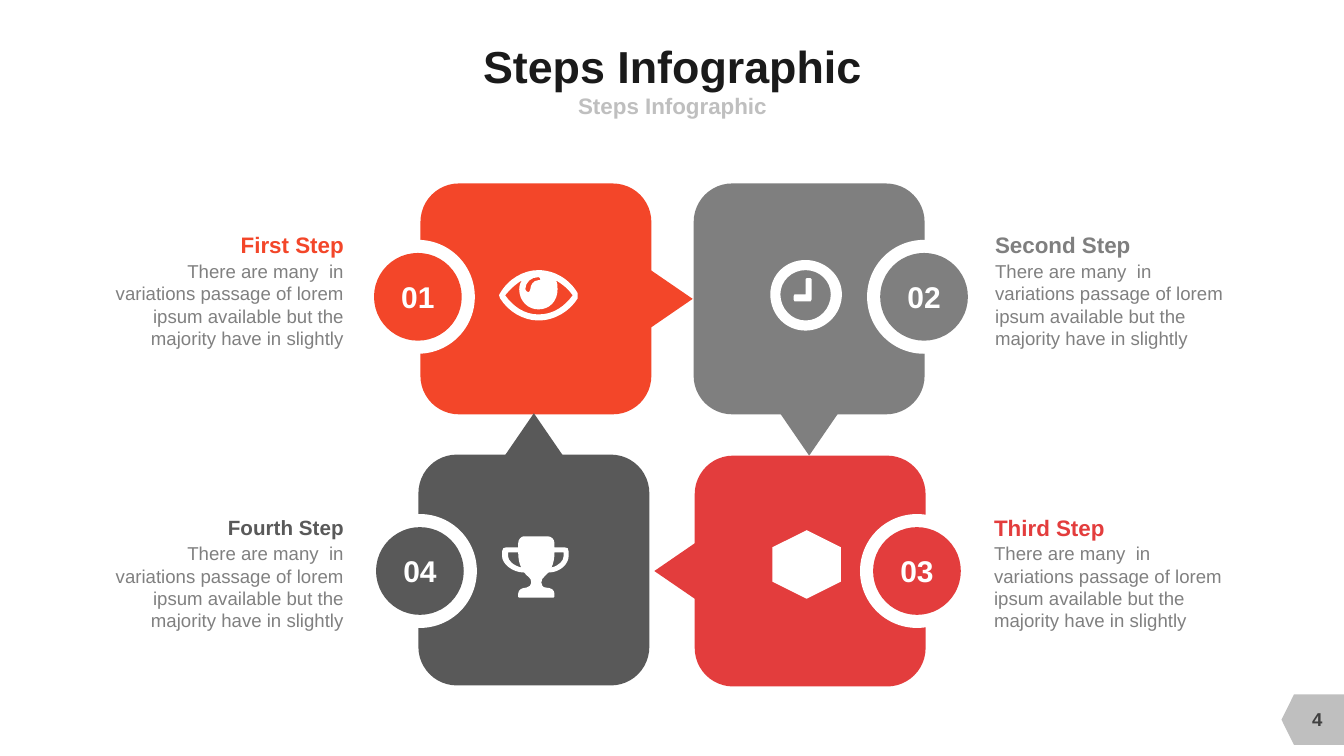
"""Build a four-step infographic slide with numbered speech cards."""
from dataclasses import dataclass

from lxml import etree
from pptx import Presentation
from pptx.dml.color import RGBColor
from pptx.enum.shapes import MSO_SHAPE
from pptx.enum.text import MSO_ANCHOR, MSO_AUTO_SIZE, PP_ALIGN
from pptx.oxml.ns import qn
from pptx.shapes.autoshape import Shape
from pptx.slide import Slide
from pptx.util import Emu, Pt

CARD = MSO_SHAPE.FLOWCHART_ALTERNATE_PROCESS
TRIANGLE = MSO_SHAPE.ISOSCELES_TRIANGLE
PAGE_TAG = MSO_SHAPE.FLOWCHART_OFFPAGE_CONNECTOR
OVAL = MSO_SHAPE.OVAL
HEXAGON = MSO_SHAPE.HEXAGON
LEFT, CENTER, RIGHT = PP_ALIGN.LEFT, PP_ALIGN.CENTER, PP_ALIGN.RIGHT
TOP, MIDDLE = MSO_ANCHOR.TOP, MSO_ANCHOR.MIDDLE
NO_AUTOFIT = MSO_AUTO_SIZE.NONE

EMU_PER_PX = 9144
FONT = "Arial"
CARD_SIZE = 229
RING_SIZE, DISC_SIZE, RING_EDGE = 113, 87, 13
BODY_WIDTH, BODY_HEIGHT, HEADING_HEIGHT = 237, 90, 27

WHITE = RGBColor(0xFF, 0xFF, 0xFF)
ORANGE = RGBColor(0xF3, 0x46, 0x29)
GRAY = RGBColor(0x7F, 0x7F, 0x7F)
RED = RGBColor(0xE3, 0x3D, 0x3D)
CHARCOAL = RGBColor(0x59, 0x59, 0x59)
BODY_GRAY = RGBColor(0x80, 0x80, 0x80)
SILVER = RGBColor(0xBF, 0xBF, 0xBF)
TITLE_BLACK = RGBColor(0x1A, 0x1A, 0x1A)
NUMBER_GRAY = RGBColor(0x40, 0x40, 0x40)

BODY = ("There are many  in variations passage of lorem "
        "ipsum available but the majority have in slightly")

Contour = list[tuple[int, ...]]


@dataclass(frozen=True)
class Box:
    """A frame in px."""
    left: int
    top: int
    width: int
    height: int

    def emu(self) -> tuple[Emu, ...]:
        """Return the frame in EMU."""
        return tuple(Emu(side * EMU_PER_PX)
                     for side in (self.left, self.top, self.width, self.height))


@dataclass(frozen=True)
class Style:
    """How a piece of text looks."""
    size: float
    color: RGBColor
    bold: bool = True
    align: PP_ALIGN = CENTER
    anchor: MSO_ANCHOR = MIDDLE
    wrap: bool = True


@dataclass(frozen=True)
class Step:
    """One card with its pointer, badge and caption."""
    number: str
    heading: str
    color: RGBColor
    card: tuple[int, int]
    pointer: tuple[int, int]
    turn: int
    ring: tuple[int, int]
    caption: tuple[int, int]
    heading_width: int
    body_top: int
    align: PP_ALIGN
    heading_size: float = 16


STEPS = [
    Step("01", "First Step", ORANGE, (417, 182), (636, 275), 90,
         (358, 238), (341, 229), 104, 258, RIGHT),
    Step("02", "Second Step", GRAY, (688, 182), (773, 409), 180,
         (860, 238), (987, 229), 136, 258, LEFT),
    Step("03", "Third Step", RED, (689, 452), (641, 545), 270,
         (853, 510), (986, 510), 111, 538, LEFT),
    Step("04", "Fourth Step", CHARCOAL, (415, 451), (500, 410), 0,
         (360, 510), (341, 510), 116, 538, RIGHT, 14.7),
]

EYE: list[Contour] = [
    [(573, 296), (565, 309, 550, 318, 534, 318), (519, 318, 504, 309, 496, 296),
     (496, 295, 495, 294, 495, 293), (495, 292, 496, 291, 496, 291),
     (504, 277, 519, 268, 534, 268), (550, 268, 565, 277, 573, 291),
     (573, 291, 573, 292, 573, 293), (573, 294, 573, 295, 573, 296)],
    [(551, 278), (553, 280, 553, 284, 553, 287), (553, 299, 545, 307, 534, 307),
     (524, 307, 515, 299, 515, 287), (515, 284, 516, 280, 518, 278),
     (511, 282, 506, 287, 501, 293), (509, 304, 520, 312, 534, 312),
     (549, 312, 560, 304, 568, 293), (564, 287, 558, 282, 551, 278)],
    [(534, 275), (527, 275, 521, 280, 521, 287), (521, 288, 523, 290, 524, 290),
     (525, 290, 526, 288, 526, 287), (526, 283, 529, 278, 534, 278),
     (535, 278, 536, 278, 536, 277), (536, 276, 535, 275, 534, 275)],
]
CLOCK: list[Contour] = [
    [(799, 328), (779, 328, 764, 312, 764, 292), (764, 273, 779, 258, 799, 258),
     (818, 258, 835, 273, 835, 292), (835, 312, 818, 328, 799, 328)],
    [(799, 268), (785, 268, 774, 279, 774, 292), (774, 306, 785, 318, 799, 318),
     (813, 318, 824, 306, 824, 292), (824, 279, 813, 268, 799, 268)],
    [(805, 297), (804, 299), (788, 299), (787, 297), (787, 294), (788, 292),
     (799, 292), (799, 277), (800, 276), (804, 276), (805, 277)],
]
TROPHY: list[Contour] = [
    [(564, 552), (564, 559, 556, 568, 544, 568), (542, 570, 540, 572, 540, 572),
     (538, 574, 537, 575, 537, 578), (537, 580, 538, 583, 542, 583),
     (546, 583, 550, 585, 550, 589), (550, 592), (549, 593), (515, 593), (514, 592),
     (514, 589), (514, 585, 518, 583, 522, 583), (525, 583, 527, 580, 527, 578),
     (527, 575, 526, 574, 524, 572), (523, 572, 522, 570, 520, 568),
     (508, 568, 498, 559, 498, 552), (498, 547), (498, 544, 500, 543, 502, 543),
     (514, 543), (514, 539), (514, 535, 517, 532, 520, 532), (543, 532),
     (547, 532, 550, 535, 550, 539), (550, 543), (560, 543),
     (563, 543, 564, 544, 564, 547)],
    [(514, 548), (504, 548), (504, 552), (504, 556, 509, 561, 517, 563),
     (515, 559, 514, 554, 514, 548)],
    [(559, 548), (550, 548), (550, 554, 549, 559, 547, 563),
     (555, 561, 559, 556, 559, 552)],
]


def paint(shape: Shape, color: RGBColor) -> None:
    """Give a shape a flat fill without line or shadow."""
    shape.shadow.inherit = False
    shape.fill.solid()
    shape.fill.fore_color.rgb = color
    shape.line.fill.background()


def add_preset(page: Slide, kind: MSO_SHAPE, box: Box, color: RGBColor,
               turn: int = 0) -> Shape:
    """Draw a flat preset shape."""
    shape = page.shapes.add_shape(kind, *box.emu())
    shape.rotation = turn
    paint(shape, color)
    return shape


def write(shape: Shape, text: str, style: Style) -> None:
    """Put one styled run into a shape."""
    frame = shape.text_frame
    frame.auto_size = NO_AUTOFIT
    frame.word_wrap = style.wrap
    frame.vertical_anchor = style.anchor
    frame.margin_left = frame.margin_right = frame.margin_top = frame.margin_bottom = 0
    para = frame.paragraphs[0]
    para.alignment = style.align
    span = para.add_run()
    span.text = text
    span.font.name = FONT
    span.font.size = Pt(style.size)
    span.font.bold = style.bold
    span.font.color.rgb = style.color


def add_text(page: Slide, box: Box, text: str, style: Style) -> None:
    """Add a text box."""
    write(page.shapes.add_textbox(*box.emu()), text, style)


def add_icon(page: Slide, contours: list[Contour]) -> None:
    """Draw a white icon from closed contours of lines and cubic curves."""
    builder = page.shapes.build_freeform(*contours[0][0], scale=EMU_PER_PX)
    for index, contour in enumerate(contours):
        if index:
            builder.move_to(*contour[0])
        builder.add_line_segments([leg[-2:] for leg in contour[1:]], close=True)
    shape = builder.convert_to_shape()
    paint(shape, WHITE)
    left = min(leg[-2] for contour in contours for leg in contour)
    top = min(leg[-1] for contour in contours for leg in contour)
    legs = [leg for contour in contours for leg in contour[1:]]
    for segment, leg in zip(list(shape.element.iter(qn("a:lnTo"))), legs):
        if len(leg) == 6:
            segment.tag = qn("a:cubicBezTo")
            for place, (x, y) in enumerate((leg[:2], leg[2:4])):
                segment.insert(place, etree.Element(qn("a:pt"), x=str(x - left), y=str(y - top)))


def add_step(page: Slide, step: Step) -> None:
    """Draw a card with its pointer, badge and caption."""
    add_preset(page, CARD, Box(*step.card, CARD_SIZE, CARD_SIZE), step.color)
    add_preset(page, TRIANGLE, Box(*step.pointer, 59, 43), step.color, step.turn)
    add_preset(page, OVAL, Box(*step.ring, RING_SIZE, RING_SIZE), WHITE)
    disc_left, disc_top = (side + RING_EDGE for side in step.ring)
    disc = add_preset(page, OVAL, Box(disc_left, disc_top, DISC_SIZE, DISC_SIZE), step.color)
    write(disc, step.number, Style(21.4, WHITE))
    edge, top = step.caption
    shift = 1 if step.align == RIGHT else 0
    add_text(page, Box(edge - shift * step.heading_width, top, step.heading_width, HEADING_HEIGHT),
             step.heading, Style(step.heading_size, step.color, align=step.align, wrap=False))
    add_text(page, Box(edge - shift * BODY_WIDTH, step.body_top, BODY_WIDTH, BODY_HEIGHT), BODY,
             Style(13.3, BODY_GRAY, False, step.align, TOP))


def main() -> None:
    """Build and save the deck."""
    deck = Presentation()
    deck.slide_width, deck.slide_height = Emu(1333 * EMU_PER_PX), Emu(750 * EMU_PER_PX)
    page = deck.slides.add_slide(deck.slide_layouts[5])
    title = page.shapes.title
    title.left, title.top, title.width, title.height = Box(256, 39, 822, 52).emu()
    write(title, "Steps Infographic", Style(32, TITLE_BLACK, wrap=False))
    add_text(page, Box(367, 90, 600, 29), "Steps Infographic", Style(16, SILVER))
    add_preset(page, PAGE_TAG, Box(1277, 683, 50, 62), SILVER, 90)
    add_text(page, Box(1273, 693, 67, 40), "4", Style(13.3, NUMBER_GRAY))
    for step in STEPS:
        add_step(page, step)
    for icon in (EYE, CLOCK, TROPHY):
        add_icon(page, icon)
    add_preset(page, HEXAGON, Box(766, 526, 68, 68), WHITE, 90)
    deck.save("out.pptx")


if __name__ == "__main__":
    main()
